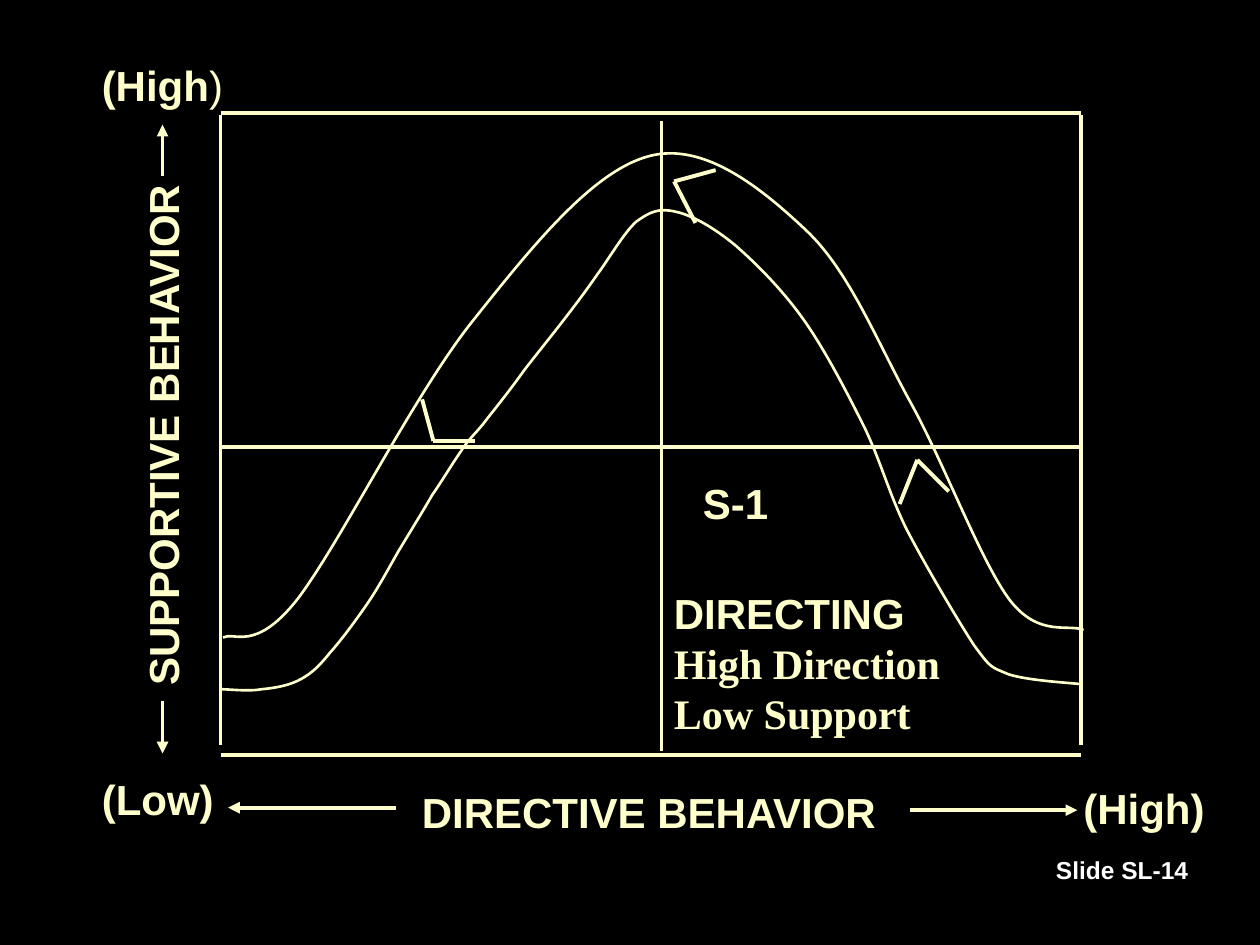
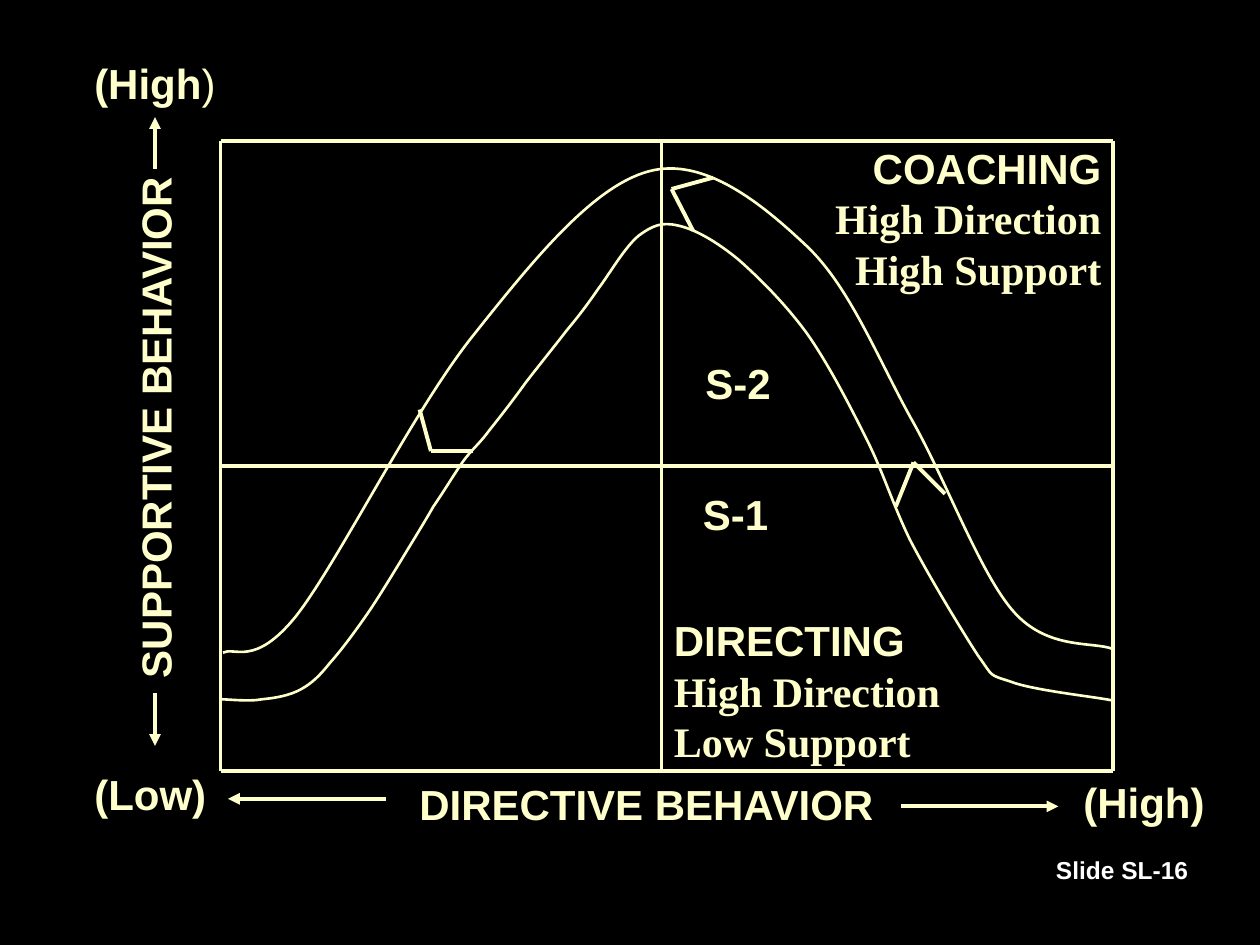
from dataclasses import dataclass

from pptx import Presentation
from pptx.dml.color import RGBColor
from pptx.enum.shapes import MSO_CONNECTOR as Connector
from pptx.enum.text import MSO_AUTO_SIZE as AutoSize, PP_ALIGN as Align
from pptx.oxml.ns import qn
from pptx.oxml.xmlchemy import OxmlElement
from pptx.util import Emu, Pt

EMU_PER_PX = 9144


@dataclass(frozen=True)
class Theme:
    """Colours, fonts, type sizes and line widths shared by the slides."""
    background: RGBColor = RGBColor(0x00, 0x00, 0x00)
    chart: RGBColor = RGBColor(0xFF, 0xFF, 0xCC)
    footer: RGBColor = RGBColor(0xFF, 0xFF, 0xFF)
    heading_font: str = "Arial"
    detail_font: str = "Times New Roman"
    label_size: int = 24
    footer_size: int = 14
    line_width: float = 2.25
    curve_width: float = 1.5


THEME = Theme()


@dataclass(frozen=True)
class Frame:
    """Edges of the four-quadrant frame and the tops of its upright lines."""
    right: int
    top: int
    bottom: int
    middle: int
    side_top: int
    axis_top: int
    left: int = 175
    axis: int = 525
    upright: int = 500


@dataclass(frozen=True)
class Axes:
    """Places of the axis labels and arrows."""
    supportive: tuple
    high_top: int
    low_top: int
    directive: tuple
    left_arrow: tuple
    right_arrow: tuple
    arrow_length: int
    right_high_top: int


OUTER_RISE = [
    (177, 506), (186, 501), (202, 518), (235, 477), (268, 435), (328, 314), (375, 255),
    (422, 196), (470, 136), (515, 124), (559, 112), (605, 150), (640, 183),
    (674, 215), (696, 271), (723, 320)]
INNER_SLOPE = [
    (773, 512), (760, 492), (734, 448), (719, 419), (705, 390), (699, 366), (686, 339),
    (672, 311), (655, 278), (638, 254), (621, 230), (601, 210), (584, 195),
    (567, 181), (550, 171), (536, 168), (523, 165), (516, 168), (505, 176),
    (495, 185), (483, 206), (474, 218), (465, 231), (459, 239), (449, 252),
    (439, 265), (426, 281), (416, 294), (406, 308), (395, 322), (387, 332),
    (379, 343), (373, 347), (366, 358), (359, 368), (352, 380), (343, 393),
    (335, 407), (325, 423), (316, 438), (308, 452), (300, 467), (291, 480),
    (282, 493), (271, 508), (262, 518), (254, 528), (248, 534), (239, 539),
    (230, 544), (219, 546), (208, 547), (198, 549), (181, 547), (175, 547)]
CHEVRON_ARMS = [((25, 25), (-14, 35)), ((33, -9), (17, 33)), ((33, 0), (-9, -33))]


def px(length):
    """Turn px into EMU."""
    return Emu(round(length * EMU_PER_PX))


def add_line(slide, start, end, arrow=False):
    """Draw a straight line, with an arrowhead at its end if asked."""
    connector = slide.shapes.add_connector(
        Connector.STRAIGHT, *(px(value) for value in (*start, *end)))
    connector.line.color.rgb = THEME.chart
    connector.line.width = Pt(THEME.line_width)
    properties = connector._element.spPr
    if arrow:
        head = OxmlElement("a:tailEnd")
        head.set("type", "triangle")
        properties.find(qn("a:ln")).append(head)
    properties.append(OxmlElement("a:effectLst"))


def add_curve(slide, points):
    """Draw an open curve from a start point followed by Bezier triples."""
    builder = slide.shapes.build_freeform(*points[0], scale=EMU_PER_PX)
    builder.add_line_segments(points[1:], close=False)
    shape = builder.convert_to_shape()
    shape.shadow.inherit = False
    shape.fill.background()
    shape.line.color.rgb = THEME.chart
    shape.line.width = Pt(THEME.curve_width)
    path = next(shape._element.iter(qn("a:path")))
    segments = path.findall(qn("a:lnTo"))
    for first in range(0, len(segments), 3):
        bezier = OxmlElement("a:cubicBezTo")
        for segment in segments[first:first + 3]:
            bezier.append(segment[0])
            path.remove(segment)
        path.append(bezier)


def add_run(paragraph, text, font=THEME.heading_font, bold=True,
            size=THEME.label_size, color=THEME.chart):
    """Add one formatted run."""
    run = paragraph.add_run()
    run.text = text
    run.font.name = font
    run.font.bold = bold
    run.font.size = Pt(size)
    run.font.color.rgb = color


def add_box(slide, left, top, width, height=50, wrap=False):
    """Add an empty text box and return it."""
    box = slide.shapes.add_textbox(px(left), px(top), px(width), px(height))
    box.text_frame.word_wrap = wrap
    box.text_frame.auto_size = AutoSize.NONE if wrap else AutoSize.SHAPE_TO_FIT_TEXT
    return box


def add_label(slide, text, left, top, width, rotation=0):
    """Add a bold one-line label."""
    box = add_box(slide, left, top, width)
    box.rotation = rotation
    add_run(box.text_frame.paragraphs[0], text)


def add_style(slide, name, details, left, top, align=Align.LEFT):
    """Name a leadership style above its levels of direction and support."""
    frame = add_box(slide, left, top, 234, 131).text_frame
    heading = frame.paragraphs[0]
    heading.alignment = align
    add_run(heading, name)
    for detail in details:
        paragraph = frame.add_paragraph()
        paragraph.alignment = align
        add_run(paragraph, detail, THEME.detail_font)


def add_frame(slide, frame):
    """Draw the outer frame and the two lines that split it."""
    for y in (frame.top, frame.middle, frame.bottom):
        add_line(slide, (frame.left, y), (frame.right, y))
    for x, top in ((frame.left, frame.side_top), (frame.axis, frame.axis_top),
                   (frame.right, frame.side_top)):
        add_line(slide, (x, top), (x, top + frame.upright))


def add_axes(slide, axes):
    """Add both axis titles with their arrows and end labels."""
    x, top = axes.supportive
    add_line(slide, (x, top + 41), (x, top), arrow=True)
    add_line(slide, (x, top + 457), (x, top + 499), arrow=True)
    add_label(slide, "SUPPORTIVE BEHAVIOR", x - 210, top + 220, 420, 270)
    high = add_box(slide, x - 58, axes.high_top, 116).text_frame.paragraphs[0]
    add_run(high, "(High")
    add_run(high, ")", bold=False)
    add_label(slide, "(Low)", x - 58, axes.low_top, 109)

    add_label(slide, "DIRECTIVE BEHAVIOR", *axes.directive, 383)
    add_label(slide, "(High)", 850, axes.right_high_top, 116)
    left, y = axes.left_arrow
    add_line(slide, (left + axes.arrow_length, y), (left, y), arrow=True)
    left, y = axes.right_arrow
    add_line(slide, (left, y), (left + axes.arrow_length, y), arrow=True)


def add_chevrons(slide, tips):
    """Mark the direction of travel between the curves."""
    for (x, y), arms in zip(tips, CHEVRON_ARMS):
        for across, down in arms:
            add_line(slide, (x, y), (x + across, y + down))


def add_footer(slide, text):
    """Add the slide reference at the lower right."""
    paragraph = add_box(slide, 745, 674, 208, wrap=True).text_frame.paragraphs[0]
    paragraph.alignment = Align.RIGHT
    add_run(paragraph, text, size=THEME.footer_size, color=THEME.footer)


def add_model(presentation, frame, axes, outer, inner, tips, footer):
    """Add a slide with the whole leadership diagram and return it."""
    slide = presentation.slides.add_slide(presentation.slide_layouts[6])
    add_frame(slide, frame)
    add_curve(slide, outer)
    add_curve(slide, inner)
    add_axes(slide, axes)
    add_chevrons(slide, tips)
    add_footer(slide, footer)
    return slide


def add_directing_slide(presentation):
    """Build the slide that introduces directing."""
    slide = add_model(
        presentation,
        Frame(right=858, top=90, bottom=599, middle=355, side_top=91, axis_top=96),
        Axes(supportive=(129, 99), high_top=42, low_top=609, directive=(325, 619),
             left_arrow=(181, 641), right_arrow=(722, 643), arrow_length=133,
             right_high_top=616),
        OUTER_RISE + [(750, 369), (779, 447), (802, 477),
                      (825, 506), (848, 495), (860, 500)],
        [(858, 543), (849, 542), (814, 540), (800, 535),
         (786, 529), (787, 531)] + INNER_SLOPE,
        [(728, 365), (535, 144), (344, 350)],
        "Slide SL-14")
    add_label(slide, "S-1", 548, 374, 73)
    add_style(slide, "DIRECTING", ["High Direction", "Low Support"], 525, 461)


def add_coaching_slide(presentation):
    """Build the slide that adds coaching to directing."""
    outer_rise = [(x, y + 12) for x, y in OUTER_RISE]
    inner_slope = [(round(1.005 * x - 1), round(0.99 * y + 13)) for x, y in INNER_SLOPE]
    slide = add_model(
        presentation,
        Frame(right=883, top=112, bottom=612, middle=370, side_top=112, axis_top=112),
        Axes(supportive=(123, 93), high_top=41, low_top=605, directive=(323, 613),
             left_arrow=(181, 634), right_arrow=(715, 640), arrow_length=125,
             right_high_top=611),
        outer_rise + [(751, 381), (778, 456), (805, 486),
                      (832, 516), (867, 509), (883, 515)],
        [(883, 556), (869, 553), (820, 548), (802, 541),
         (784, 535), (789, 538)] + inner_slope,
        [(725, 367), (533, 150), (342, 358)],
        "Slide SL-16")
    add_label(slide, "S-1", 548, 383, 73)
    add_label(slide, "S-2", 550, 279, 73)
    add_style(slide, "DIRECTING", ["High Direction", "Low Support"], 525, 483)
    add_style(slide, "COACHING", ["High Direction", "High Support"], 650, 108, Align.RIGHT)


def main():
    """Build and save the presentation."""
    presentation = Presentation()
    presentation.slide_width = px(1000)
    presentation.slide_height = px(750)
    background = presentation.slide_master.background.fill
    background.solid()
    background.fore_color.rgb = THEME.background
    add_directing_slide(presentation)
    add_coaching_slide(presentation)
    presentation.save("out.pptx")


if __name__ == "__main__":
    main()
